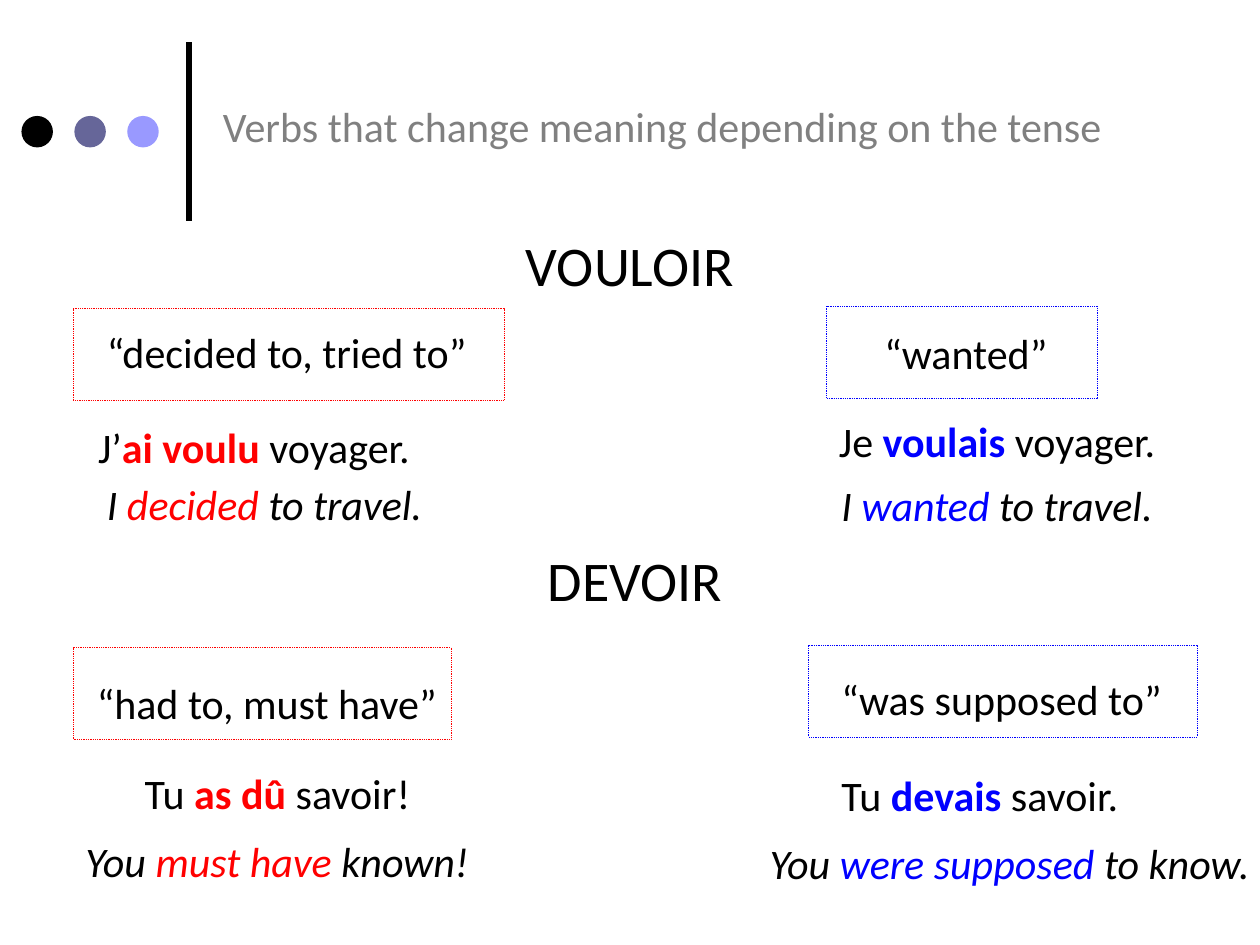
from lxml import etree
from pptx import Presentation
from pptx import util as u
from pptx.dml.color import RGBColor
from pptx.enum import dml, shapes, text
from pptx.oxml.ns import qn

# Grid of 100 columns by 75 rows, each cell a tenth of an inch
COLS, ROWS = 100, 75
CELL = u.Inches(0.1)
FONT = "Calibri"
COLORS = {
    "black": "000000",
    "grey": "808080",
    "slate": "666699",
    "lilac": "9999FF",
    "passe": "FF0000",
    "imparfait": "0000FF",
}

# Verb headings: text, column, row, width
HEADINGS = [("VOULOIR", 15, 15.1, 70), ("DEVOIR", 35.8, 40.1, 29.2)]

# Meanings: tense, text, text place (col, row, width), frame place
MEANINGS = [
    ("passe", "“decided to, tried to”", (7.5, 25.4, 31.7), (5.8, 24.5, 34.2)),
    ("imparfait", "“wanted”", (69.2, 25.5, 20), (65.6, 24.3, 21.5)),
    ("passe", "“had to, must have”", (6.7, 53.3, 36.7), (5.8, 51.4, 30)),
    ("imparfait", "“was supposed to”", (65.8, 53, 32.5), (64.2, 51.2, 30.8)),
]

# Examples: tense, French and English, each as (before, verb, after) and place
EXAMPLES = [
    ("passe",
     ("J’", "ai voulu ", "voyager."), (6.8, 33, 29.6),
     ("I ", "decided ", "to travel."), (7.5, 37.5, 32.5)),
    ("imparfait",
     ("Je ", "voulais", " voyager."), (65.6, 32.5, 32.7),
     ("I ", "wanted ", "to travel."), (65.8, 37.6, 27.5)),
    ("passe",
     ("Tu ", "as dû ", "savoir!"), (10.5, 60.4, 32.2),
     ("You ", "must have ", "known!"), (5.8, 65.8, 38.7)),
    ("imparfait",
     ("Tu ", "devais", " savoir."), (65.8, 60.6, 34.2),
     ("You ", "were supposed ", "to know."), (60.1, 66, 43.9)),
]


def cells(*counts):
    return [round(n * CELL) for n in counts]


def rgb(name):
    return RGBColor.from_string(COLORS[name])


def add_text(s, place, parts, size=24, color="black", height=5, before=6):
    """Add one paragraph of runs and return it."""
    tf = s.shapes.add_textbox(*cells(*place, height)).text_frame
    tf.word_wrap = True
    tf.auto_size = text.MSO_AUTO_SIZE.SHAPE_TO_FIT_TEXT
    p = tf.paragraphs[0]
    p.space_before = u.Pt(before)
    for part in parts:
        r = p.add_run()
        r.text = part
        r.font.name = FONT
        r.font.size = u.Pt(size)
        r.font.color.rgb = rgb(color)
    return p


def add_heading(s, verb, col, row, width):
    p = add_text(s, (col, row, width), [verb], size=32, height=9.1)
    p.alignment = text.PP_ALIGN.CENTER
    p.line_spacing = 1.5


def add_example(s, tense, french, french_at, english, english_at):
    verb = add_text(s, french_at, french).runs[1]
    verb.font.bold = True
    verb.font.color.rgb = rgb(tense)
    p = add_text(s, english_at, english)
    for r in p.runs:
        r.font.italic = True
    p.runs[1].font.color.rgb = rgb(tense)


def add_frame(s, place, tense):
    sp = s.shapes.add_shape(shapes.MSO_SHAPE.RECTANGLE, *cells(*place, 7.3))
    sp.shadow.inherit = False
    sp.fill.background()
    sp.line.color.rgb = rgb(tense)
    sp.line.width = u.Pt(0.5)
    sp.line.dash_style = dml.MSO_LINE.ROUND_DOT


def add_dot(s, col, color):
    sp = s.shapes.add_shape(shapes.MSO_SHAPE.OVAL, *cells(col, 9.2, 2.5, 2.5))
    sp.shadow.inherit = False
    sp.fill.solid()
    sp.fill.fore_color.rgb = rgb(color)
    sp.line.fill.background()


def add_rule(s, col, top, bottom):
    cx = s.shapes.add_connector(
        shapes.MSO_CONNECTOR.STRAIGHT, *cells(col, bottom, col, top))
    cx.line.color.rgb = rgb("black")
    cx.line.width = u.Pt(3)
    etree.SubElement(cx.line._ln.getparent(), qn("a:effectLst"))


def main():
    prs = Presentation()
    prs.slide_width, prs.slide_height = cells(COLS, ROWS)
    s = prs.slides.add_slide(prs.slide_layouts[6])

    # Title band: rule, dots and title
    add_rule(s, 15, 3.3, 17.5)
    for i, color in enumerate(("black", "slate", "lilac")):
        add_dot(s, 1.7 + 4.2 * i, color)
    add_text(s, (16.7, 7.5, 80),
             ["Verbs that change meaning depending on the tense"],
             color="grey", before=12)

    # Verbs, with an example in each tense
    for heading in HEADINGS:
        add_heading(s, *heading)
    for example in EXAMPLES:
        add_example(s, *example)

    # Framed meanings
    for tense, meaning, text_at, frame_at in MEANINGS:
        add_text(s, text_at, [meaning])
        add_frame(s, frame_at, tense)

    prs.save("out.pptx")


if __name__ == "__main__":
    main()
